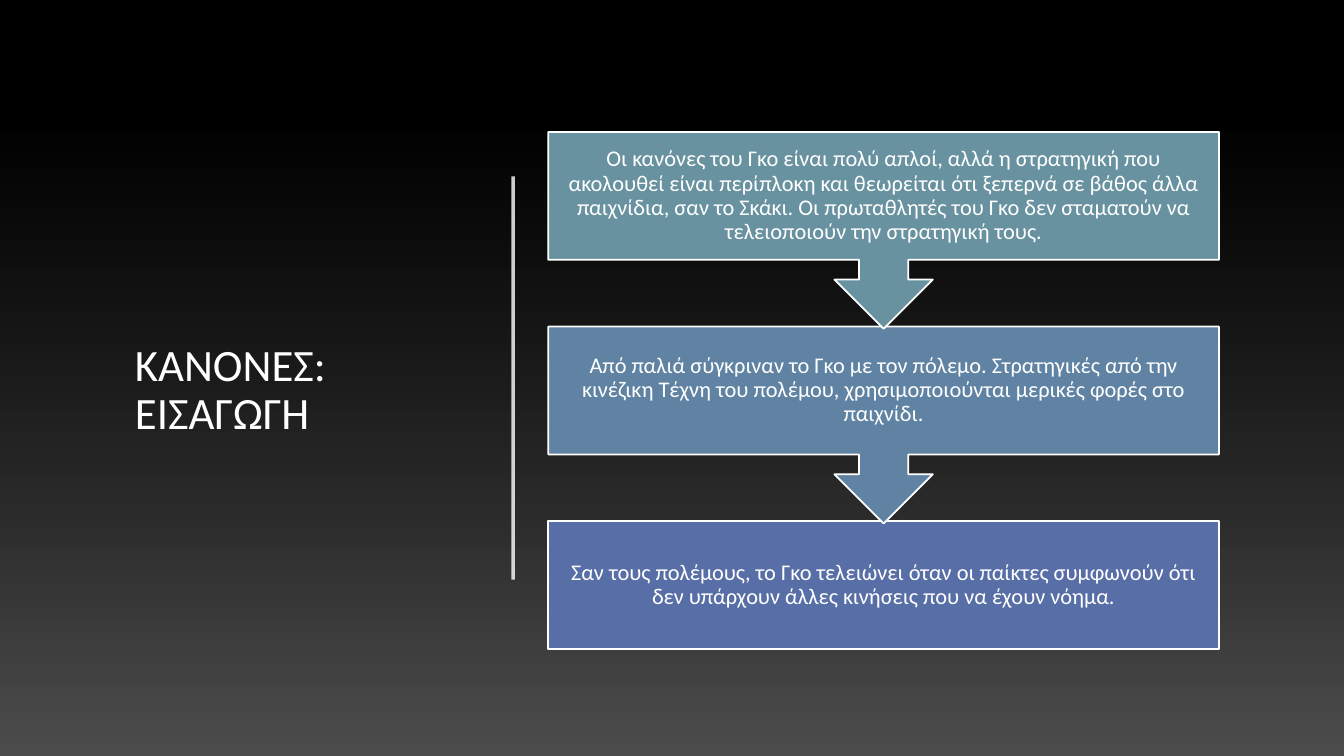
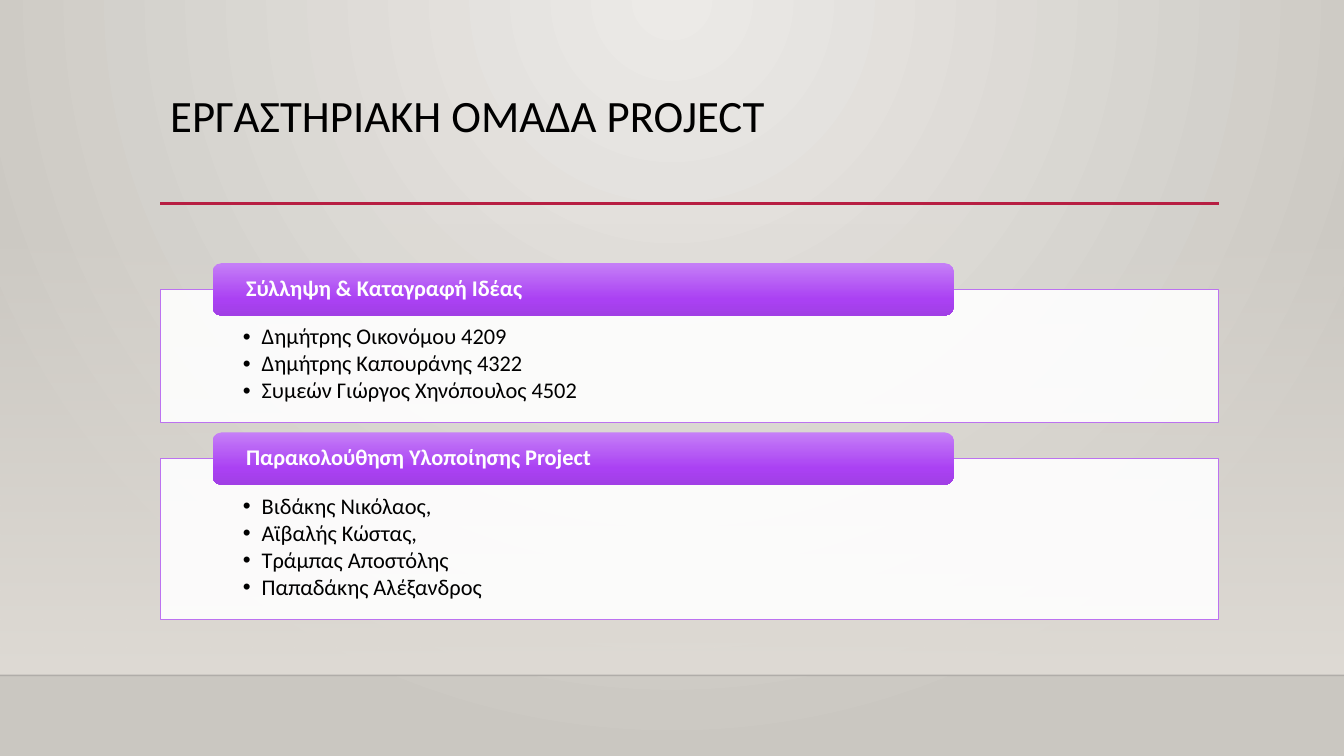
from lxml import etree
from pptx import Presentation
from pptx.dml.color import RGBColor
from pptx.enum import shapes, text
from pptx.oxml.ns import qn
from pptx.util import Pt

FONT = "Calibri"
WHITE, BLACK = "FFFFFF", "000000"
TITLE_SIZE, BODY_SIZE, SPACING = 32, 16, 0.9
WIDTH, HEIGHT = 960, 540


def paint(fill, *stops):
    """One (hex, opacity) makes a solid fill; several (position, hex, opacity) a downward gradient."""
    if len(stops) == 1:
        color, opacity = stops[0]
        fill.solid()
        fill.fore_color.rgb = RGBColor.from_string(color)
        if opacity < 100:
            clr = fill._xPr.find(".//" + qn("a:srgbClr"))
            etree.SubElement(clr, qn("a:alpha"), val=str(opacity * 1000))
        return
    fill.gradient()
    fill.gradient_angle = 270
    gs_list = fill._xPr.find(".//" + qn("a:gsLst"))
    for gs in list(gs_list):
        gs_list.remove(gs)
    for position, color, opacity in stops:
        gs = etree.SubElement(gs_list, qn("a:gs"), pos=str(position * 1000))
        clr = etree.SubElement(gs, qn("a:srgbClr"), val=color)
        if opacity < 100:
            etree.SubElement(clr, qn("a:alpha"), val=str(opacity * 1000))


def write(p, words, size, color, bold=False, align=text.PP_ALIGN.LEFT):
    p.alignment = align
    p.line_spacing = SPACING
    r = p.add_run()
    r.text = words
    r.font.name, r.font.size, r.font.bold = FONT, Pt(size), bold
    r.font.color.rgb = RGBColor.from_string(color)


prs = Presentation()
prs.slide_width, prs.slide_height = Pt(WIDTH), Pt(HEIGHT)

# Shared frame: background, shaded area, rules (x1, y1, x2, y2, colour, opacity, width), title
frames = [
    dict(background=[(BLACK, 100)],
         area=(94.3, 445.7), shade=[(0, "3C3C3C", 4), (100, "4E4E4E", 100)],
         rules=[(366.5, 126, 366.5, 414, WHITE, 80, 2.5)],
         title="ΚΑΝΟΝΕΣ: ΕΙΣΑΓΩΓΗ", box=(89.3, 94.3, 251.3, 370),
         anchor=text.MSO_ANCHOR.MIDDLE, color=WHITE),
    dict(background=[(0, "ECEAE7", 100), (100, "CAC7C1", 100)],
         area=(159, 323.4), shade=[(0, "DFDBD5", 0), (100, "DFDBD5", 100)],
         rules=[(0, 482.4, WIDTH, 482.4, "000001", 20, 1),
                (114.5, 145.4, 871, 145.4, "B71E42", 100, 2.5)],
         title="ΕΡΓΑΣΤΗΡΙΑΚH ΟΜAΔΑ PROJECT", box=(114.5, 63.4, 756, 82.8),
         anchor=text.MSO_ANCHOR.TOP, color=BLACK),
]
for frame in frames:
    s = prs.slides.add_slide(prs.slide_layouts[6])
    paint(s.background.fill, *frame["background"])

    top, height = frame["area"]
    sp = s.shapes.add_shape(shapes.MSO_SHAPE.RECTANGLE, 0, Pt(top), Pt(WIDTH), Pt(height))
    sp.shadow.inherit = False
    sp.line.fill.background()
    paint(sp.fill, *frame["shade"])

    for x1, y1, x2, y2, color, opacity, width in frame["rules"]:
        rule = s.shapes.add_connector(shapes.MSO_CONNECTOR.STRAIGHT, Pt(x1), Pt(y1), Pt(x2), Pt(y2))
        rule.line.width = Pt(width)
        paint(rule.line.fill, (color, opacity))
        etree.SubElement(rule._element.spPr, qn("a:effectLst"))

    tf = s.shapes.add_textbox(*map(Pt, frame["box"])).text_frame
    tf.word_wrap = True
    tf.vertical_anchor = frame["anchor"]
    write(tf.paragraphs[0], frame["title"], TITLE_SIZE, frame["color"])

rules_slide, team_slide = prs.slides

# Slide 1: three steps, drawn from the bottom up so each arrow tip lies over the next box
steps = [
    ("Οι κανόνες του Γκο είναι πολύ απλοί, αλλά η στρατηγική που ακολουθεί είναι περίπλοκη "
     "και θεωρείται ότι ξεπερνά σε βάθος άλλα παιχνίδια, σαν το Σκάκι. Οι πρωταθλητές του Γκο "
     "δεν σταματούν να τελειοποιούν την στρατηγική τους.", "6892A0"),
    ("Από παλιά σύγκριναν το Γκο με τον πόλεμο. Στρατηγικές από την κινέζικη Τέχνη του πολέμου, "
     "χρησιμοποιούνται μερικές φορές στο παιχνίδι.", "6083A3"),
    ("Σαν τους πολέμους, το Γκο τελειώνει όταν οι παίκτες συμφωνούν ότι δεν υπάρχουν άλλες "
     "κινήσεις που να έχουν νόημα.", "586EA6"),
]
STEP_TOP, STEP_PITCH = 94.3, 139
for i, (words, color) in reversed(list(enumerate(steps))):
    last = i == len(steps) - 1
    kind = shapes.MSO_SHAPE.RECTANGLE if last else shapes.MSO_SHAPE.DOWN_ARROW_CALLOUT
    sp = rules_slide.shapes.add_shape(kind, Pt(391.7), Pt(STEP_TOP + i * STEP_PITCH),
                                      Pt(479), Pt(91.4 if last else 140.6))
    sp.shadow.inherit = False
    paint(sp.fill, (color, 100))
    paint(sp.line.fill, (WHITE, 100))
    sp.line.width = Pt(1.25)
    tf = sp.text_frame
    tf.word_wrap = True
    tf.vertical_anchor = text.MSO_ANCHOR.MIDDLE
    tf.margin_left = tf.margin_right = tf.margin_top = tf.margin_bottom = Pt(8.6)
    write(tf.paragraphs[0], words, BODY_SIZE, WHITE, align=text.PP_ALIGN.CENTER)

# Slide 2: panels with bulleted names, each under a heading tab
groups = [
    ("Σύλληψη & Καταγραφή Ιδέας", 95,
     ["Δημήτρης Οικονόμου 4209", "Δημήτρης Καπουράνης 4322", "Συμεών Γιώργος Χηνόπουλος 4502"]),
    ("Παρακολούθηση Υλοποίησης Project", 115,
     ["Βιδάκης Νικόλαος,", "Αϊβαλής Κώστας,", "Τράμπας Αποστόλης", "Παπαδάκης Αλέξανδρος"]),
]
TAB_HEIGHT, GROUP_GAP = 37.4, 7.2
tab_top = 188
for heading, height, names in groups:
    panel_top = tab_top + TAB_HEIGHT / 2
    panel = team_slide.shapes.add_shape(shapes.MSO_SHAPE.RECTANGLE, Pt(114.5), Pt(panel_top),
                                        Pt(756), Pt(height))
    panel.shadow.inherit = False
    paint(panel.fill, (WHITE, 90))
    paint(panel.line.fill, ("BC72F0", 100))
    panel.line.width = Pt(0.75)
    tf = panel.text_frame
    tf.word_wrap = True
    tf.vertical_anchor = text.MSO_ANCHOR.TOP
    tf.margin_left = tf.margin_right = Pt(59)
    tf.margin_top, tf.margin_bottom = Pt(25.9), Pt(8.6)
    for i, name in enumerate(names):
        p = tf.add_paragraph() if i else tf.paragraphs[0]
        p.space_after = Pt(2)
        write(p, name, BODY_SIZE, BLACK)
        pPr = p._p.get_or_add_pPr()
        pPr.set("marL", str(Pt(13.5)))
        pPr.set("indent", str(-Pt(13.5)))
        etree.SubElement(pPr, qn("a:buFont"), typeface="Arial")
        etree.SubElement(pPr, qn("a:buChar"), char="•")

    tab = team_slide.shapes.add_shape(shapes.MSO_SHAPE.ROUNDED_RECTANGLE, Pt(152), Pt(tab_top),
                                      Pt(529.2), Pt(TAB_HEIGHT))
    tab.shadow.inherit = False
    tab.line.fill.background()
    paint(tab.fill, (0, "C57FF7", 100), (69, "AA41F3", 100), (100, "A13FE5", 100))
    tf = tab.text_frame
    tf.word_wrap = True
    tf.vertical_anchor = text.MSO_ANCHOR.MIDDLE
    tf.margin_left = tf.margin_right = Pt(22)
    tf.margin_top = tf.margin_bottom = 0
    write(tf.paragraphs[0], heading, BODY_SIZE, WHITE, bold=True)
    tab_top = panel_top + height + GROUP_GAP

# Slide 2: the background spreads in circles from the top centre
lin = team_slide.background.fill._xPr.find(".//" + qn("a:lin"))
circle = etree.Element(qn("a:path"), {"path": "circle"})
etree.SubElement(circle, qn("a:fillToRect"), l="43000", t="0", r="43000", b="100000")
lin.getparent().replace(lin, circle)

prs.save("out.pptx")
